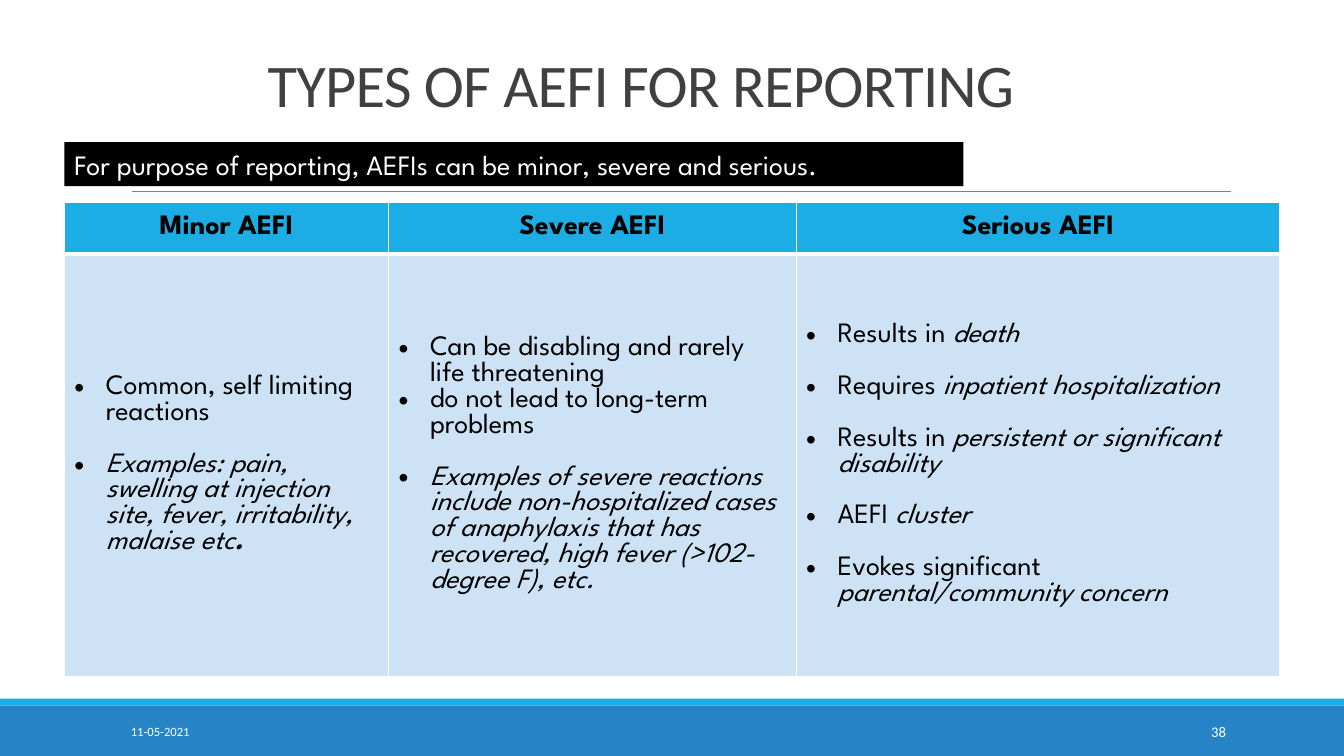
"""Build the slide on types of AEFI for reporting."""
from dataclasses import dataclass
from typing import Optional

from lxml.etree import SubElement
from pptx import Presentation
from pptx.dml.color import RGBColor
from pptx.enum.shapes import MSO_CONNECTOR as Connector, MSO_SHAPE as Shape
from pptx.enum.text import MSO_ANCHOR as Anchor, PP_ALIGN as Align
from pptx.oxml import parse_xml
from pptx.oxml.ns import nsdecls, qn
from pptx.util import Pt

BLUE = RGBColor(0x26, 0x83, 0xC6)
SKY = RGBColor(0x1C, 0xAD, 0xE4)
PALE = RGBColor(0xCD, 0xE3, 0xF5)
GRAY = RGBColor(0x80, 0x80, 0x80)
DARK = RGBColor(0x40, 0x40, 0x40)
BLACK = RGBColor(0, 0, 0)
WHITE = RGBColor(0xFF, 0xFF, 0xFF)

CALIBRI = "Calibri"
SPARTAN = "League Spartan"
INDENT = Pt(22.5)
ITEM_GAP = Pt(18.6)
ITALIC = {"italic": True}


@dataclass
class Box:
    """A rectangle or text box with one line of text."""
    left: float
    top: float
    width: float
    height: float
    fill: Optional[RGBColor] = None
    text: str = ""
    name: str = CALIBRI
    size: float = 20
    color: RGBColor = WHITE
    align: Align = Align.LEFT
    anchor: Anchor = Anchor.MIDDLE


@dataclass
class Item:
    """A bullet made of runs, each a text with its format."""
    runs: list
    gap: bool = True


@dataclass
class Column:
    """A table column with a heading and bullets."""
    heading: str
    width: float
    items: list


BANDS = [Box(0, 504, 960, 36, BLUE), Box(0, 499, 960, 5, SKY)]
TITLE = Box(46, 47.5, 868.3, 41.8, None, "TYPES OF AEFI FOR REPORTING", CALIBRI, 43.2,
            DARK, Align.CENTER, Anchor.BOTTOM)
LABELS = [
    Box(46, 101.5, 642.2, 31.5, BLACK,
        "For purpose of reporting, AEFIs can be minor, severe and serious.", SPARTAN),
    Box(86.4, 508.3, 194.4, 28.8, None, "11-05-2021", size=9),
    Box(779.8, 508.3, 103, 28.8, None, "38", size=10.5, align=Align.RIGHT),
]
COLUMNS = [
    Column("Minor AEFI", 231.5, [
        Item([("Common, self limiting reactions", {})]),
        Item([("Examples: pain, swelling at injection site, fever, irritability, malaise etc",
               ITALIC), (".", {"italic": True, "bold": True})]),
    ]),
    Column("Severe AEFI", 291.2, [
        Item([("Can be disabling and rarely life threatening", {})]),
        Item([("do not lead to long-term problems", {})], gap=False),
        Item([("Examples of severe reactions include non-hospitalized cases of anaphylaxis "
               "that has recovered, high fever (>102-degree F), etc.", ITALIC)]),
    ]),
    Column("Serious AEFI", 345.6, [
        Item([("Results in ", {}), ("death", ITALIC)]),
        Item([("Requires ", {}), ("inpatient hospitalization", ITALIC)]),
        Item([("Results in ", {}), ("persistent or significant disability", ITALIC)]),
        Item([("AEFI ", {}), ("cluster", ITALIC)]),
        Item([("Evokes significant ", {}), ("parental/community concern", ITALIC)]),
    ]),
]


def add_run(p, text: str, color: RGBColor, **formats):
    """Add a run and set its font from the given formats."""
    r = p.add_run()
    r.text = text
    for key, value in formats.items():
        setattr(r.font, key, value)
    r.font.color.rgb = color
    return r


def add_box(s, box: Box):
    """Draw a box and return its shape."""
    area = [Pt(v) for v in (box.left, box.top, box.width, box.height)]
    if box.fill is None:
        sp = s.shapes.add_textbox(*area)
    else:
        sp = s.shapes.add_shape(Shape.RECTANGLE, *area)
        sp.shadow.inherit = False
        sp.fill.solid()
        sp.fill.fore_color.rgb = box.fill
        sp.line.fill.background()
    if box.text:
        tf = sp.text_frame
        tf.word_wrap = True
        tf.vertical_anchor = box.anchor
        p = tf.paragraphs[0]
        p.alignment = box.align
        add_run(p, box.text, box.color, name=box.name, size=Pt(box.size))
    return sp


def add_title(s, box: Box) -> None:
    """Draw the title, set left of centre by its right inset."""
    tf = add_box(s, box).text_frame
    tf.margin_right = Pt(52)
    p = tf.paragraphs[0]
    p.line_spacing = 0.85
    p.runs[0].font._element.set("spc", "-50")


def add_rule(s) -> None:
    """Draw the thin rule under the title."""
    line = s.shapes.add_connector(Connector.STRAIGHT, Pt(94.3), Pt(136.8), Pt(879.1), Pt(136.8))
    line.line.color.rgb = GRAY
    line.line.width = Pt(0.5)
    SubElement(line._element.spPr, qn("a:effectLst"))


def style_cell(cell, fill: RGBColor, top: float, bottom: float) -> None:
    """Set the fill, anchor and white borders of a cell."""
    cell.fill.solid()
    cell.fill.fore_color.rgb = fill
    cell.vertical_anchor = Anchor.MIDDLE
    tc_pr = cell._tc.get_or_add_tcPr()
    for i, (side, width) in enumerate(zip("LRTB", (1, 1, top, bottom))):
        tc_pr.insert(i, parse_xml(
            f'<a:ln{side} {nsdecls("a")} w="{Pt(width)}"><a:solidFill>'
            f'<a:srgbClr val="{WHITE}"/></a:solidFill></a:ln{side}>'))


def add_bullet(p) -> None:
    """Give a paragraph a hanging bullet."""
    p_pr = p._p.get_or_add_pPr()
    p_pr.set("marL", str(INDENT))
    p_pr.set("indent", str(-INDENT))
    SubElement(p_pr, qn("a:buFont"), typeface="Arial")
    SubElement(p_pr, qn("a:buChar"), char="•")


def add_types_table(s, columns: list) -> None:
    """Draw the table with one column for each type."""
    width = sum(column.width for column in columns)
    table = s.shapes.add_table(2, len(columns), Pt(46), Pt(144.3), Pt(width), Pt(338.9)).table
    table.horz_banding = False
    for row, height in zip(table.rows, (37.2, 301.7)):
        row.height = Pt(height)
    for i, column in enumerate(columns):
        table.columns[i].width = Pt(column.width)
        head, body = table.cell(0, i), table.cell(1, i)
        style_cell(head, SKY, 1, 3)
        style_cell(body, PALE, 3, 1)
        p = head.text_frame.paragraphs[0]
        p.alignment = Align.CENTER
        add_run(p, column.heading, BLACK, name=SPARTAN, size=Pt(20), bold=True)
        tf = body.text_frame
        for j, item in enumerate(column.items):
            p = tf.add_paragraph() if j else tf.paragraphs[0]
            if j and item.gap:
                p.space_before = ITEM_GAP
            add_bullet(p)
            for text, formats in item.runs:
                base = {"name": SPARTAN, "size": Pt(20), "bold": False, "italic": False}
                add_run(p, text, BLACK, **(base | formats))


def main() -> None:
    """Build and save the slide."""
    prs = Presentation()
    prs.slide_width, prs.slide_height = Pt(960), Pt(540)
    s = prs.slides.add_slide(prs.slide_layouts[6])
    for band in BANDS:
        add_box(s, band)
    add_rule(s)
    add_title(s, TITLE)
    add_types_table(s, COLUMNS)
    for label in LABELS:
        add_box(s, label)
    prs.save("out.pptx")


if __name__ == "__main__":
    main()
